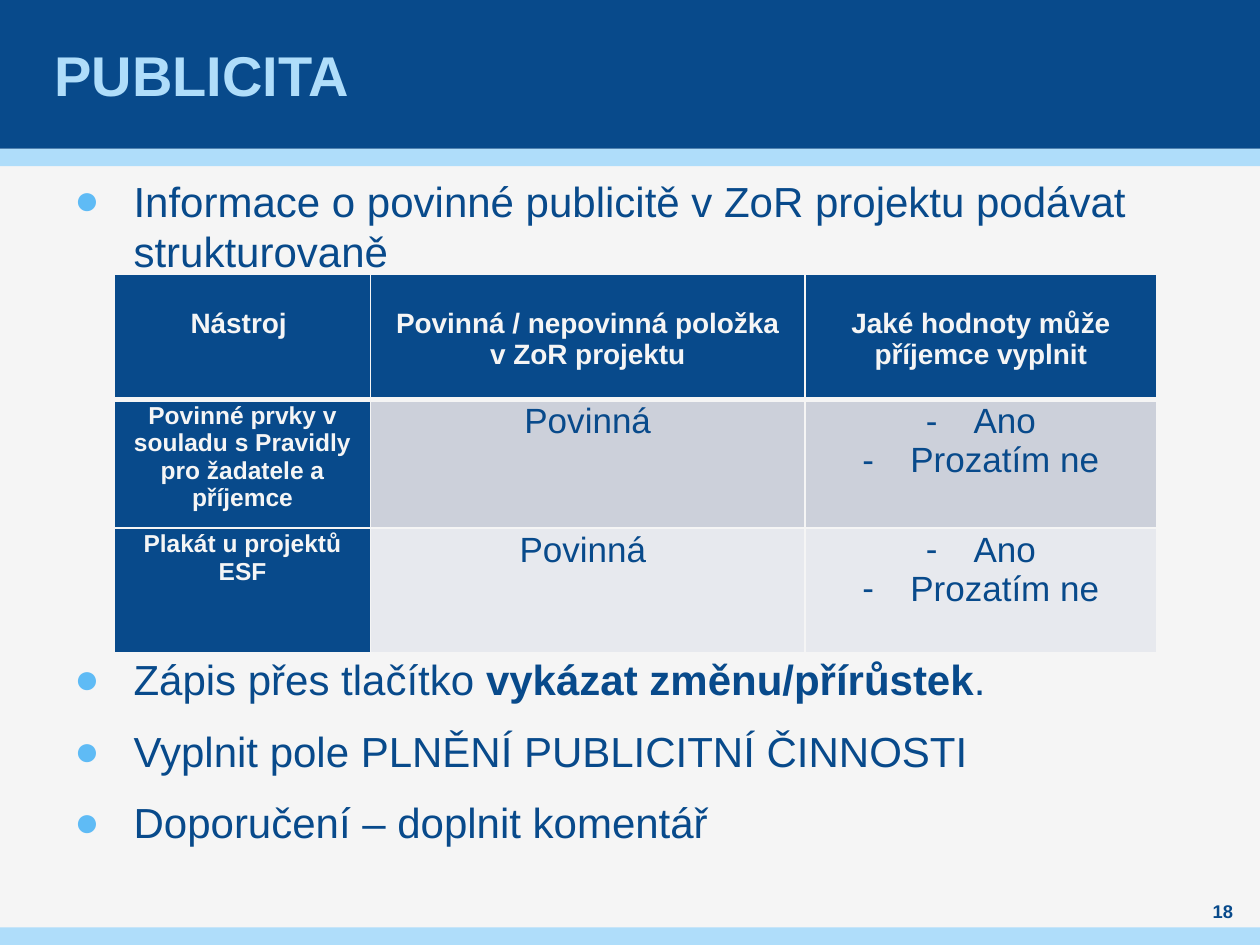
"""Build the PUBLICITA slide: banded frame, bulleted guidance and a table of publicity tools."""

from lxml.etree import SubElement
from pptx import Presentation
from pptx.dml.color import RGBColor
from pptx.enum.shapes import MSO_SHAPE
from pptx.enum.text import MSO_ANCHOR, PP_ALIGN
from pptx.oxml.ns import qn
from pptx.util import Inches, Pt

NAVY = RGBColor(0x08, 0x4A, 0x8B)
SKY = RGBColor(0xAF, 0xDD, 0xFA)
BULLET_BLUE = RGBColor(0x5F, 0xBB, 0xF5)
PAPER = RGBColor(0xF5, 0xF5, 0xF5)
DARK_BAND = RGBColor(0xCC, 0xD0, 0xDA)
LIGHT_BAND = RGBColor(0xE7, 0xE9, 0xEE)


def add_span(para, text, size, color, bold=False):
    span = para.add_run()
    span.text = text
    span.font.name = "Arial"
    span.font.size = Pt(size)
    span.font.bold = bold
    span.font.color.rgb = color


def add_bullet(para, mark, indent, color):
    properties = para._p.get_or_add_pPr()
    properties.set("marL", str(indent))
    properties.set("indent", str(-indent))
    bullet_color = SubElement(properties, qn("a:buClr"))
    SubElement(bullet_color, qn("a:srgbClr"), val=str(color))
    SubElement(properties, qn("a:buFont"), typeface="Arial")
    SubElement(properties, qn("a:buChar"), char=mark)


deck = Presentation()
deck.slide_width, deck.slide_height = Inches(10), Inches(7.5)
COL = deck.slide_width // 1000
ROW = deck.slide_height // 750

page = deck.slides.add_slide(deck.slide_layouts[5])
page.background.fill.solid()
page.background.fill.fore_color.rgb = PAPER

for top, height, color in [(118, 14, SKY), (0, 118, NAVY), (736, 14, SKY)]:
    band = page.shapes.add_shape(
        MSO_SHAPE.RECTANGLE, 0, ROW * top, deck.slide_width, ROW * height
    )
    band.shadow.inherit = False
    band.fill.solid()
    band.fill.fore_color.rgb = color
    band.line.fill.background()

title = page.shapes.title
page.shapes.element.append(title.element)
title.left, title.top, title.width, title.height = COL * 39, 0, COL * 921, ROW * 118
frame = title.text_frame
frame.margin_left = frame.margin_right = COL * 4
frame.margin_top = frame.margin_bottom = 0
frame.vertical_anchor = MSO_ANCHOR.MIDDLE
frame.paragraphs[0].alignment = PP_ALIGN.LEFT
add_span(frame.paragraphs[0], "PUBLICITA", 32, SKY, True)

body = page.shapes.add_textbox(COL * 59, ROW * 139, COL * 882, ROW * 531)
number = page.shapes.add_textbox(COL * 945, ROW * 713, COL * 51, ROW * 20)
for box in (body, number):
    frame = box.text_frame
    frame.word_wrap = True
    frame.margin_left = frame.margin_right = frame.margin_top = frame.margin_bottom = 0

TABLE_GAP = 204
guidance = [
    (0, [("Informace o povinné publicitě v\u00a0ZoR projektu podávat strukturovaně", False)]),
    (TABLE_GAP, [("Zápis přes tlačítko ", False), ("vykázat změnu/přírůstek", True), (".", False)]),
    (0, [("Vyplnit pole PLNĚNÍ PUBLICITNÍ ČINNOSTI", False)]),
    (0, [("Doporučení – doplnit komentář", False)]),
]
for index, (gap, spans) in enumerate(guidance):
    frame = body.text_frame
    para = frame.add_paragraph() if index else frame.paragraphs[0]
    para.line_spacing = Pt(28.8)
    para.space_before = Pt(6 + gap)
    para.space_after = Pt(6)
    add_bullet(para, "●", COL * 47, BULLET_BLUE)
    for text, bold in spans:
        add_span(para, text, 24, NAVY, bold)

number.text_frame.vertical_anchor = MSO_ANCHOR.MIDDLE
para = number.text_frame.paragraphs[0]
para.alignment = PP_ALIGN.CENTER
add_span(para, "18", 10.5, NAVY, True)

answers = ["Ano", "Prozatím ne"]
tools = [
    [["Nástroj "], ["Povinná / nepovinná položka v\u00a0ZoR projektu"], ["Jaké hodnoty může příjemce vyplnit"]],
    [["Povinné prvky v souladu s Pravidly pro žadatele a příjemce"], ["Povinná"], answers],
    [["Plakát u projektů ESF"], ["Povinná "], answers],
]
table = page.shapes.add_table(3, 3, COL * 91, ROW * 218, COL * 827, ROW * 300).table
for column, width in zip(table.columns, (203, 345, 279)):
    column.width = COL * width
for row, height in zip(table.rows, (99, 102, 99)):
    row.height = ROW * height

for r, tool in enumerate(tools):
    for c, lines in enumerate(tool):
        cell = table.cell(r, c)
        heading = r == 0 or c == 0
        cell.margin_left = cell.margin_right = COL * 2
        cell.margin_top = ROW * (27 if r == 0 else 2)
        cell.margin_bottom = ROW * 2
        for side in "LRTB":
            thick = (r, side) in ((0, "B"), (1, "T"))
            edge = SubElement(
                cell._tc.get_or_add_tcPr(), qn(f"a:ln{side}"), w=str(Pt(3 if thick else 1))
            )
            edge_fill = SubElement(edge, qn("a:solidFill"))
            SubElement(edge_fill, qn("a:srgbClr"), val=str(PAPER))
        cell.fill.solid()
        cell.fill.fore_color.rgb = NAVY if heading else (DARK_BAND, LIGHT_BAND)[r - 1]
        size = 16 if r == 0 else 14 if c == 0 else 20
        for index, text in enumerate(lines):
            frame = cell.text_frame
            para = frame.add_paragraph() if index else frame.paragraphs[0]
            para.alignment = PP_ALIGN.CENTER
            if lines is answers:
                add_bullet(para, "-", COL * 38, NAVY)
            add_span(para, text, size, PAPER if heading else NAVY, heading)

deck.save("out.pptx")
